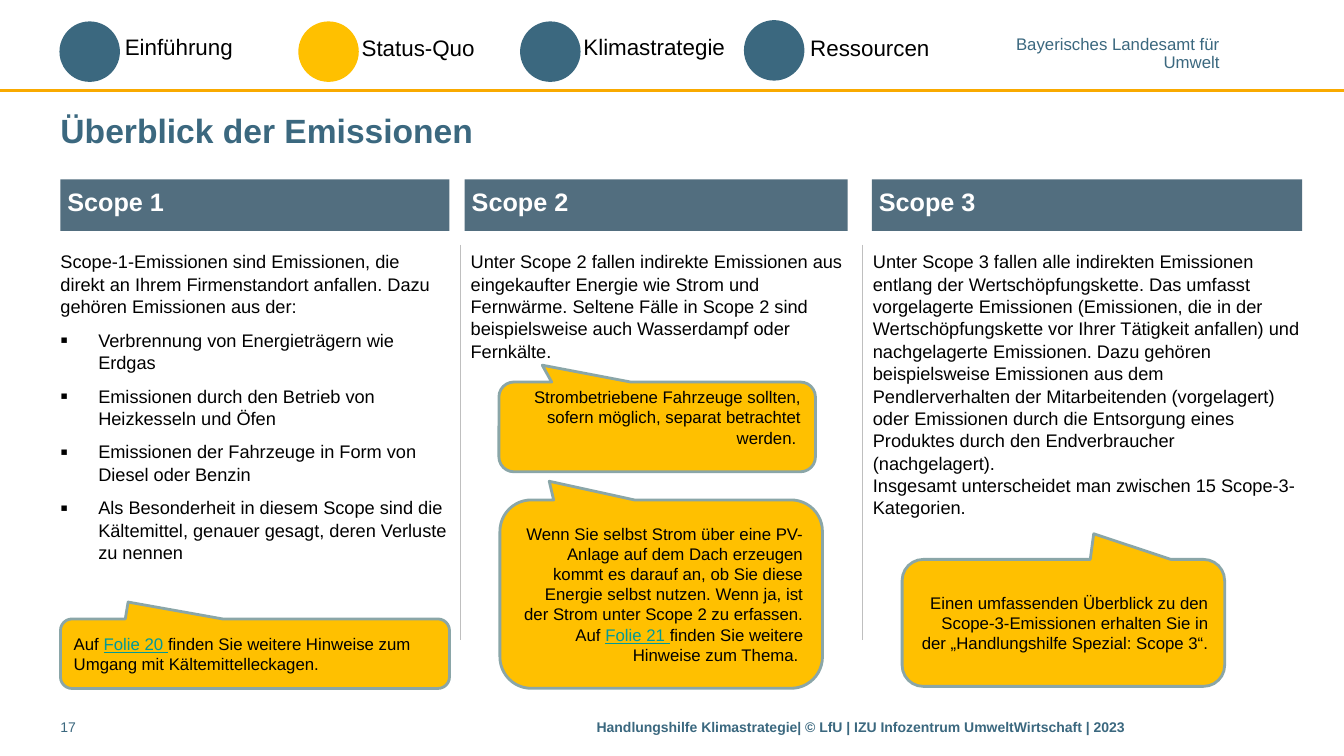
from lxml import etree
from pptx import Presentation
from pptx import util as u
from pptx.dml import color
from pptx.enum import shapes, text
from pptx.oxml import ns

Pt = u.Pt
BLUE, GOLD, BLACK, WHITE = "3B687F", "FFC000", "000000", "FFFFFF"
LEFT, RIGHT = text.PP_ALIGN.LEFT, text.PP_ALIGN.RIGHT
TOP, MID = text.MSO_ANCHOR.TOP, text.MSO_ANCHOR.MIDDLE
hue = color.RGBColor.from_string


def frame(shape, pads=(0, 3.6, 0, 3.6), anchor=TOP):
    body = shape.text_frame
    body.word_wrap = True
    body.auto_size = text.MSO_AUTO_SIZE.NONE
    body.vertical_anchor = anchor
    body.margin_left, body.margin_top, body.margin_right, body.margin_bottom = map(Pt, pads)
    return body


def say(para, words, size, tint=BLACK, bold=False, align=LEFT):
    para.alignment = align
    run = para.add_run()
    run.text = words
    run.font.name = "Arial"
    run.font.size = Pt(size)
    run.font.bold = bold
    run.font.color.rgb = hue(tint)
    return run


deck = Presentation()
deck.slide_width, deck.slide_height = Pt(960), Pt(540)
slide = deck.slides.add_slide(deck.slide_layouts[5])
draw = slide.shapes

title = draw.title
title.left, title.top, title.width, title.height = Pt(43.2), Pt(73.4), Pt(886.3), Pt(39.6)
say(frame(title, anchor=MID).paragraphs[0], "Überblick der Emissionen", 24, BLUE, True)

rules = [
    (0, 64.8, 960, 64.8, "F9AA00", 2),
    (329, 175, 329, 457.2, "BFBFBF", 0.75),
    (616.3, 175, 616.3, 457.2, "BFBFBF", 0.75),
]
for x, y, right, low, tint, width in rules:
    rule = draw.add_connector(shapes.MSO_CONNECTOR.STRAIGHT, Pt(x), Pt(y), Pt(right), Pt(low))
    rule.line.color.rgb = hue(tint)
    rule.line.width = Pt(width)
    etree.SubElement(rule._element.spPr, ns.qn("a:effectLst"))

steps = [
    ("Einführung", 42.5, 15.3, 82.1, 20.2, BLUE),
    ("Status-Quo", 213.1, 15.3, 251.3, 20.9, GOLD),
    ("Klimastrategie", 371.5, 15.3, 409.7, 20.2, BLUE),
    ("Ressourcen", 531.4, 14.4, 571.7, 20.9, BLUE),
]
for name, x, y, left, top, tint in steps:
    dot = draw.add_shape(shapes.MSO_SHAPE.OVAL, Pt(x), Pt(y), Pt(43.2), Pt(43.2))
    dot.shadow.inherit = False
    dot.fill.solid()
    dot.fill.fore_color.rgb = hue(tint)
    dot.line.fill.background()
    label = draw.add_textbox(Pt(left), Pt(top), Pt(130), Pt(26.6))
    say(frame(label, (7.2, 3.6, 7.2, 3.6)).paragraphs[0], name, 16)

office = frame(draw.add_textbox(Pt(725), Pt(26.6), Pt(146.2), Pt(24.5)), (0, 0, 0, 0))
for para, words in zip(
    (office.paragraphs[0], office.add_paragraph()),
    ("Bayerisches Landesamt für", "Umwelt"),
):
    para.line_spacing = 0.85
    say(para, words, 12, BLUE, align=RIGHT)

scopes = [
    ("Scope 1", 43.2, 277.9, 43.2, 276.5, [
        "Scope-1-Emissionen sind Emissionen, die direkt an Ihrem Firmenstandort anfallen. "
        "Dazu gehören Emissionen aus der:",
    ]),
    ("Scope 2", 332, 273.6, 336.2, 272.2, [
        "Unter Scope 2 fallen indirekte Emissionen aus eingekaufter Energie wie Strom und "
        "Fernwärme. Seltene Fälle in Scope 2 sind beispielsweise auch Wasserdampf oder Fernkälte.",
    ]),
    ("Scope 3", 622.8, 307.4, 623.5, 306, [
        "Unter Scope 3 fallen alle indirekten Emissionen entlang der Wertschöpfungskette. "
        "Das umfasst vorgelagerte Emissionen (Emissionen, die in der Wertschöpfungskette vor "
        "Ihrer Tätigkeit anfallen) und nachgelagerte Emissionen. Dazu gehören beispielsweise "
        "Emissionen aus dem Pendlerverhalten der Mitarbeitenden (vorgelagert) oder Emissionen "
        "durch die Entsorgung eines Produktes durch den Endverbraucher (nachgelagert).",
        "Insgesamt unterscheidet man zwischen 15 Scope-3-Kategorien.",
    ]),
]
bodies = []
for name, x, width, left, span, parts in scopes:
    head = draw.add_shape(shapes.MSO_SHAPE.RECTANGLE, Pt(x), Pt(128.2), Pt(width), Pt(36.7))
    head.shadow.inherit = False
    head.fill.solid()
    head.fill.fore_color.rgb = hue("526E7F")
    head.line.fill.background()
    para = frame(head, (5, 3.6, 0, 3.6), MID).paragraphs[0]
    para.line_spacing = Pt(16)
    say(para, name, 18, WHITE, True)
    body = frame(draw.add_textbox(Pt(left), Pt(175), Pt(span), Pt(298.8)))
    para = body.paragraphs[0]
    para.line_spacing = Pt(16)
    for i, part in enumerate(parts):
        if i:
            para.add_line_break()
        say(para, part, 13)
    bodies.append(body)

sources = [
    "Verbrennung von Energieträgern wie Erdgas",
    "Emissionen durch den Betrieb von Heizkesseln und Öfen",
    "Emissionen der Fahrzeuge in Form von Diesel oder Benzin",
    "Als Besonderheit in diesem Scope sind die Kältemittel, genauer gesagt, "
    "deren Verluste zu nennen",
]
for words in sources:
    para = bodies[0].add_paragraph()
    props = para._p.get_or_add_pPr()
    props.set("marL", str(Pt(27)))
    props.set("indent", str(-Pt(27)))
    tint = etree.SubElement(props, ns.qn("a:buClr"))
    etree.SubElement(tint, ns.qn("a:srgbClr"), val=BLACK)
    etree.SubElement(props, ns.qn("a:buSzPct"), val="120000")
    etree.SubElement(props, ns.qn("a:buFont"), typeface="Arial")
    etree.SubElement(props, ns.qn("a:buChar"), char="▪")
    para.line_spacing = Pt(16)
    para.space_before = Pt(8)
    say(para, words, 13)

notes = [
    (357.1, 357.1, 230.4, 134.6, -0.347, -0.599, 3.6, RIGHT, [
        "Wenn Sie selbst Strom über eine PV-Anlage auf dem Dach erzeugen kommt es darauf an, "
        "ob Sie diese Energie selbst nutzen. Wenn ja, ist der Strom unter Scope 2 zu erfassen. Auf ",
        "Folie 21 ",
        "finden Sie weitere Hinweise zum Thema. ",
    ]),
    (356.4, 272.9, 226.1, 64.1, -0.363, -0.688, 17.4, RIGHT, [
        "Strombetriebene Fahrzeuge sollten, sofern möglich, separat betrachtet werden. ",
    ]),
    (644.4, 399.6, 230.4, 90.7, 0.094, -0.702, 3.6, RIGHT, [
        "Einen umfassenden Überblick zu den Scope-3-Emissionen erhalten Sie in der "
        "„Handlungshilfe Spezial: Scope 3“. ",
    ]),
    (43.2, 442.1, 277.9, 49.7, -0.326, -0.743, 3.6, LEFT, [
        "Auf ",
        "Folie 20 ",
        "finden Sie weitere Hinweise zum Umgang mit Kältemittelleckagen.",
    ]),
]
for x, y, width, height, tipx, tipy, low, align, parts in notes:
    note = draw.add_shape(
        shapes.MSO_SHAPE.ROUNDED_RECTANGULAR_CALLOUT, Pt(x), Pt(y), Pt(width), Pt(height)
    )
    note.adjustments[0], note.adjustments[1] = tipx, tipy
    note.shadow.inherit = False
    note.fill.solid()
    note.fill.fore_color.rgb = hue(GOLD)
    note.line.color.rgb = hue("8AA6A8")
    note.line.width = Pt(2)
    para = frame(note, (7.2, 3.6, 7.2, low), MID).paragraphs[0]
    for part in parts:
        linked = part.startswith("Folie")
        run = say(para, part, 12, "009999" if linked else BLACK, align=align)
        run.font.underline = linked

footers = [
    (426.2, 503.3, "Handlungshilfe Klimastrategie| © LfU | IZU Infozentrum UmweltWirtschaft | 2023", True),
    (43.2, 50.4, "17", False),
]
for x, width, words, bold in footers:
    foot = draw.add_textbox(Pt(x), Pt(509.8), Pt(width), Pt(22.3))
    say(frame(foot).paragraphs[0], words, 10, BLUE, bold)

deck.save("out.pptx")
